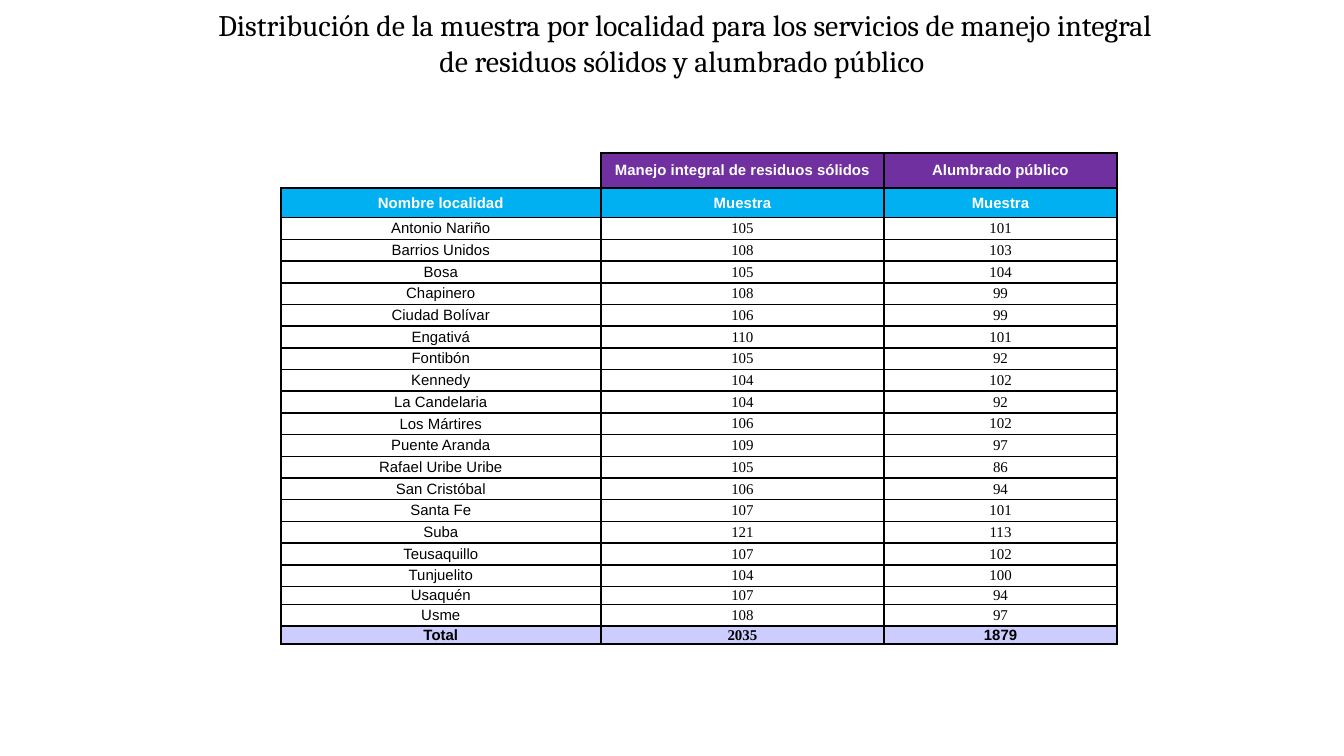
import pptx
import pptx.dml.color
import pptx.enum.text
import pptx.oxml
import pptx.oxml.ns
import pptx.util
from pptx.util import Inches

RGBColor = pptx.dml.color.RGBColor
BLACK = RGBColor(0x00, 0x00, 0x00)
WHITE = RGBColor(0xFF, 0xFF, 0xFF)
PURPLE = RGBColor(0x70, 0x30, 0xA0)
BLUE = RGBColor(0x00, 0xB0, 0xF0)
LAVENDER = RGBColor(0xCC, 0xCC, 0xFF)
SANS, SERIF, TITLE_FONT = "Arial", "Times New Roman", "Cambria"

TITLE = ("Distribución de la muestra por localidad para los servicios de "
         "manejo integral de residuos sólidos y alumbrado público ")
SERVICES = ("", "Manejo integral de residuos sólidos", "Alumbrado público")
HEADINGS = ("Nombre localidad", "Muestra", "Muestra")
LOCALITIES = [
    ("Antonio Nariño", 105, 101),
    ("Barrios Unidos", 108, 103),
    ("Bosa", 105, 104),
    ("Chapinero", 108, 99),
    ("Ciudad Bolívar", 106, 99),
    ("Engativá", 110, 101),
    ("Fontibón", 105, 92),
    ("Kennedy", 104, 102),
    ("La Candelaria", 104, 92),
    ("Los Mártires", 106, 102),
    ("Puente Aranda", 109, 97),
    ("Rafael Uribe Uribe", 105, 86),
    ("San Cristóbal", 106, 94),
    ("Santa Fe", 107, 101),
    ("Suba", 121, 113),
    ("Teusaquillo", 107, 102),
    ("Tunjuelito", 104, 100),
    ("Usaquén", 107, 94),
    ("Usme", 108, 97),
]
TOTAL = ("Total", 2035, 1879)

# Each row: values, fill, text colour, bold, font of each value
ROWS = [
    (SERVICES, PURPLE, WHITE, True, (SANS, SANS, SANS)),
    (HEADINGS, BLUE, WHITE, True, (SANS, SANS, SANS)),
    *[(row, WHITE, BLACK, False, (SANS, SERIF, SERIF)) for row in LOCALITIES],
    (TOTAL, LAVENDER, BLACK, True, (SANS, SERIF, SANS)),
]
SLIDE_WIDTH = 10
SLIDE_HEIGHT = SLIDE_WIDTH * 9 / 16
COLUMN_WIDTHS = (0.79, 0.85, 0.74, 2.11, 1.73)
NAME_COLUMNS = 3  # the locality name spans these grid columns
VALUE_OF_COLUMN = {0: 0, NAME_COLUMNS: 1, NAME_COLUMNS + 1: 2}
TABLE_LEFT, TABLE_TOP, TABLE_HEIGHT = 2.09, 1.14, 3.65
SPECIAL_HEIGHTS = {0: 0.26, 1: 0.22, 19: 0.13, 21: 0.13}
ROW_HEIGHT = ((TABLE_HEIGHT - sum(SPECIAL_HEIGHTS.values()))
              / (len(ROWS) - len(SPECIAL_HEIGHTS)))


def add_run(paragraph, text, font_name, size, color, bold=False):
    paragraph.alignment = pptx.enum.text.PP_ALIGN.CENTER
    run = paragraph.add_run()
    run.text = text
    run.font.name = font_name
    run.font.size = pptx.util.Pt(size)
    run.font.bold = bold
    run.font.color.rgb = color


def format_cell(cell, fill, sides):
    """Set margins, 1 pt black borders on the given sides, and the fill."""
    cell.margin_left = cell.margin_right = cell.margin_top = cell.margin_bottom = 0
    cell.vertical_anchor = pptx.enum.text.MSO_ANCHOR.MIDDLE
    properties = cell._tc.get_or_add_tcPr()
    for side in "LRTB":
        paint = (f'<a:solidFill><a:srgbClr val="{BLACK}"/></a:solidFill>'
                 if side in sides else "<a:noFill/>")
        properties.append(pptx.oxml.parse_xml(
            f'<a:ln{side} {pptx.oxml.ns.nsdecls("a")} w="12700">{paint}</a:ln{side}>'))
    cell.fill.solid()
    cell.fill.fore_color.rgb = fill


def shrink_empty_cell(cell):
    """Keep a cell without text from stretching its row."""
    paragraph = cell.text_frame.paragraphs[0]._p
    paragraph.append(pptx.oxml.parse_xml(
        f'<a:endParaRPr {pptx.oxml.ns.nsdecls("a")} sz="800"/>'))


def add_title(slide):
    frame = slide.shapes.add_textbox(
        Inches(1.56), Inches(0.09), Inches(7.08), Inches(0.46)).text_frame
    frame.word_wrap = True
    frame.vertical_anchor = pptx.enum.text.MSO_ANCHOR.MIDDLE
    frame.margin_left = frame.margin_right = 0
    frame.margin_top = frame.margin_bottom = Inches(0.01)
    add_run(frame.paragraphs[0], TITLE, TITLE_FONT, 16, BLACK)


def add_sample_table(slide):
    table = slide.shapes.add_table(
        len(ROWS), len(COLUMN_WIDTHS), Inches(TABLE_LEFT), Inches(TABLE_TOP),
        Inches(sum(COLUMN_WIDTHS)), Inches(TABLE_HEIGHT)).table
    table.first_row = table.horz_banding = False
    for column, width in zip(table.columns, COLUMN_WIDTHS):
        column.width = Inches(width)

    for r, (values, fill, color, bold, fonts) in enumerate(ROWS):
        table.rows[r].height = Inches(SPECIAL_HEIGHTS.get(r, ROW_HEIGHT))
        for c in range(len(COLUMN_WIDTHS)):
            cell = table.cell(r, c)
            blank = r == 0 and c < NAME_COLUMNS
            sides = ("RB" if c == NAME_COLUMNS - 1 else "B") if blank else "LRTB"
            format_cell(cell, WHITE if blank else fill, sides)
            if blank or c not in VALUE_OF_COLUMN:
                shrink_empty_cell(cell)
            else:
                v = VALUE_OF_COLUMN[c]
                add_run(cell.text_frame.paragraphs[0], str(values[v]),
                        fonts[v], 8, color, bold)
        if r > 0:
            table.cell(r, 0).merge(table.cell(r, NAME_COLUMNS - 1))


def main():
    presentation = pptx.Presentation()
    presentation.slide_width = Inches(SLIDE_WIDTH)
    presentation.slide_height = Inches(SLIDE_HEIGHT)
    slide = presentation.slides.add_slide(presentation.slide_layouts[6])
    add_title(slide)
    add_sample_table(slide)
    presentation.save("out.pptx")


if __name__ == "__main__":
    main()
